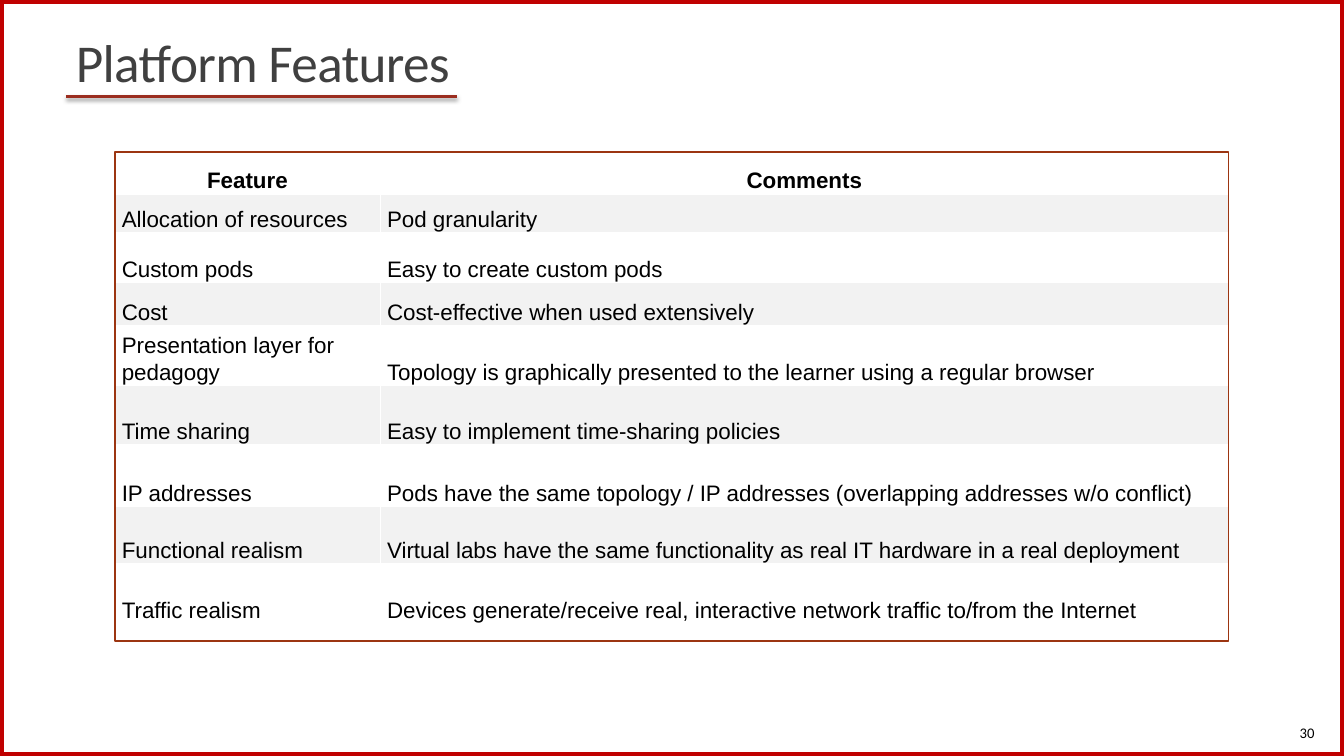
from dataclasses import dataclass

from lxml.etree import SubElement
from pptx import Presentation
from pptx.dml.color import RGBColor
from pptx.enum.shapes import MSO_CONNECTOR, MSO_SHAPE
from pptx.enum.text import MSO_ANCHOR, PP_ALIGN
from pptx.oxml.ns import qn
from pptx.util import Pt


@dataclass(frozen=True)
class Theme:
    heading: str = "Calibri"
    body: str = "Arial"
    edge: str = "C00000"
    title: str = "404040"
    rule: str = "9B2D1F"
    outline: str = "9C3511"
    text: str = "000000"
    white: str = "FFFFFF"
    band: str = "F2F2F2"
    title_size: float = 38
    body_size: float = 16
    number_size: float = 10.5


T = Theme()
W, H = 960, 540
COLS = (189.5, 606)
ROW_HEIGHTS = (29.5, 28, 35.5, 31, 42.5, 42.5, 44, 41, 42.5)
FEATURES = (
    ("Feature", "Comments"),
    ("Allocation of resources", "Pod granularity"),
    ("Custom pods", "Easy to create custom pods"),
    ("Cost", "Cost-effective when used extensively"),
    ("Presentation layer for pedagogy",
     "Topology is graphically presented to the learner using a regular browser"),
    ("Time sharing", "Easy to implement time-sharing policies"),
    ("IP addresses",
     "Pods have the same topology / IP addresses (overlapping addresses w/o conflict)"),
    ("Functional realism",
     "Virtual labs have the same functionality as real IT hardware in a real deployment"),
    ("Traffic realism",
     "Devices generate/receive real, interactive network traffic to/from the Internet"),
)


def rgb(color):
    return RGBColor.from_string(color)


def write(tf, text, *, size, font, color=T.text, bold=False,
          align=PP_ALIGN.LEFT, spacing=1.0, tracking=None):
    tf.word_wrap = True
    p = tf.paragraphs[0]
    p.alignment = align
    p.line_spacing = spacing
    r = p.add_run()
    r.text = text
    r.font.size = Pt(size)
    r.font.name = font
    r.font.bold = bold
    r.font.color.rgb = rgb(color)
    if tracking is not None:
        r.font._element.set("spc", str(round(tracking * 100)))


def add_frame(s, x, y, w, h, color, width):
    sp = s.shapes.add_shape(MSO_SHAPE.RECTANGLE, Pt(x), Pt(y), Pt(w), Pt(h))
    sp.shadow.inherit = False
    sp.fill.background()
    sp.line.color.rgb = rgb(color)
    sp.line.width = Pt(width)


def add_rule(s, x, y, w):
    line = s.shapes.add_connector(
        MSO_CONNECTOR.STRAIGHT, Pt(x), Pt(y), Pt(x + w), Pt(y))
    line.line.color.rgb = rgb(T.rule)
    line.line.width = Pt(2)
    effects = SubElement(line._element.spPr, qn("a:effectLst"))
    shadow = SubElement(effects, qn("a:outerShdw"), blurRad=str(Pt(3.1)),
                        dist=str(Pt(1.6)), dir="5400000", rotWithShape="0")
    color = SubElement(shadow, qn("a:srgbClr"), val=T.text)
    SubElement(color, qn("a:alpha"), val="38000")


def add_title(s, x, y, w, h):
    sp = s.shapes.title
    sp.left, sp.top, sp.width, sp.height = Pt(x), Pt(y), Pt(w), Pt(h)
    sp.text_frame.vertical_anchor = MSO_ANCHOR.BOTTOM
    write(sp.text_frame, "Platform Features", size=T.title_size, font=T.heading,
          color=T.title, spacing=0.85, tracking=-0.5)
    add_rule(s, x, y + h - 1, 279.5)


def set_borders(cell, bottom):
    tcPr = cell._tc.get_or_add_tcPr()
    for i, (side, width) in enumerate(
            (("lnL", 1), ("lnR", 1), ("lnT", 1), ("lnB", bottom))):
        ln = tcPr.makeelement(qn(f"a:{side}"), {"w": str(Pt(width))})
        fill = SubElement(ln, qn("a:solidFill"))
        SubElement(fill, qn("a:srgbClr"), val=T.white)
        tcPr.insert(i, ln)


def add_features(s, x, y, w, h):
    table = s.shapes.add_table(len(FEATURES), len(COLS), Pt(x), Pt(y),
                               Pt(w), Pt(sum(ROW_HEIGHTS))).table
    for col, width in zip(table.columns, COLS):
        col.width = Pt(width)
    for i, (row, height) in enumerate(zip(table.rows, ROW_HEIGHTS)):
        row.height = Pt(height)
        header = i == 0
        for cell, text in zip(row.cells, FEATURES[i]):
            cell.fill.solid()
            cell.fill.fore_color.rgb = rgb(T.band if i % 2 else T.white)
            cell.margin_left = cell.margin_right = Pt(5)
            cell.margin_top = cell.margin_bottom = Pt(0)
            cell.vertical_anchor = MSO_ANCHOR.BOTTOM
            set_borders(cell, 3 if header else 1)
            write(cell.text_frame, text, size=T.body_size, font=T.body,
                  bold=header, spacing=1.07,
                  align=PP_ALIGN.CENTER if header else PP_ALIGN.LEFT)
    add_frame(s, x, y, w, h, T.outline, 1.25)


def add_number(s, x, y, w, h):
    tf = s.shapes.add_textbox(Pt(x), Pt(y), Pt(w), Pt(h)).text_frame
    tf.vertical_anchor = MSO_ANCHOR.MIDDLE
    write(tf, "30", size=T.number_size, font=T.heading, align=PP_ALIGN.RIGHT)


def main():
    prs = Presentation()
    prs.slide_width, prs.slide_height = Pt(W), Pt(H)
    s = prs.slides.add_slide(prs.slide_layouts[5])
    add_frame(s, 0, 0, W, H, T.edge, 6)
    add_title(s, 47, 0, 865, 70)
    add_features(s, 82, 108.7, sum(COLS), 349)
    add_number(s, 843, 508.5, 103, 29)
    prs.save("out.pptx")


if __name__ == "__main__":
    main()
